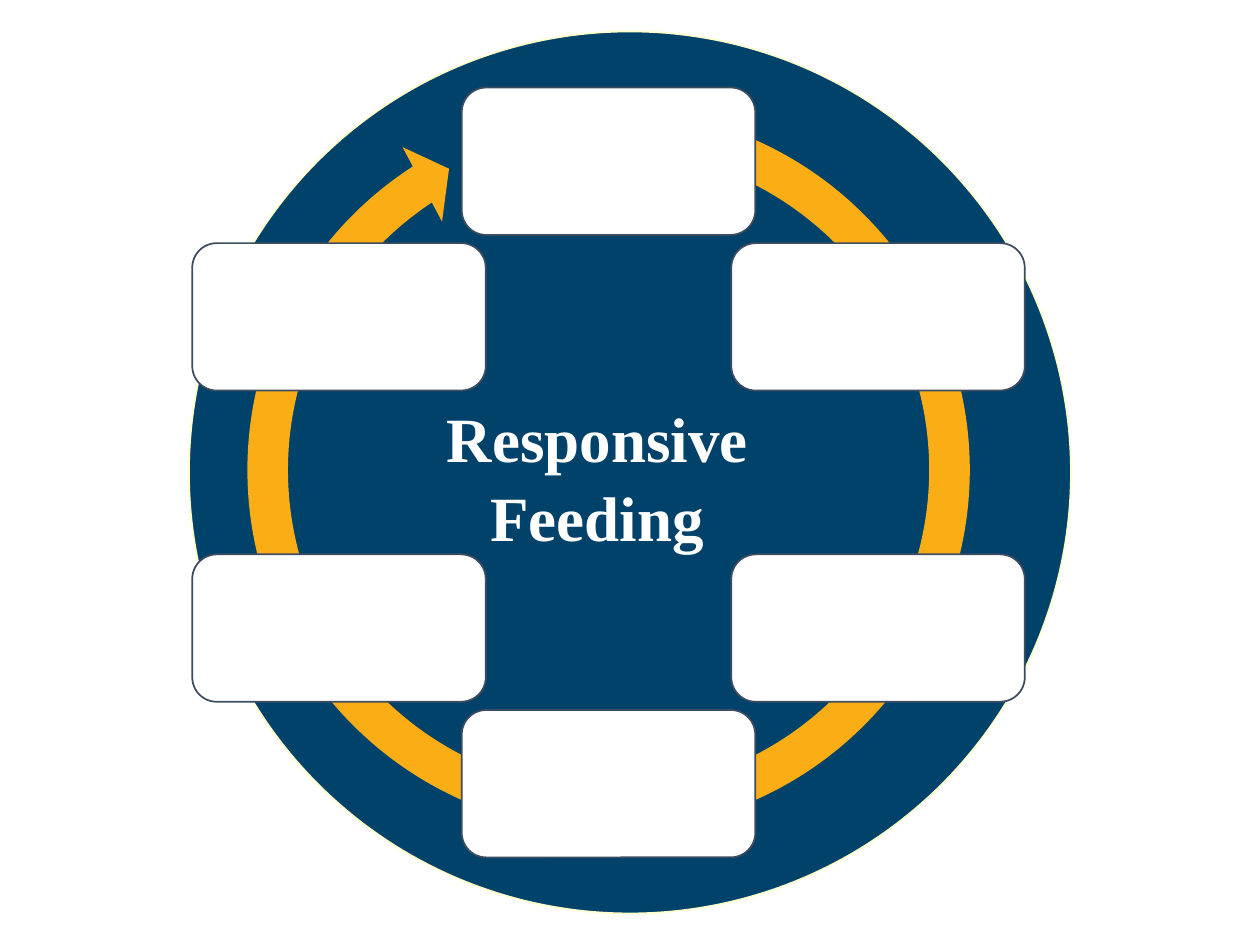
import math

from pptx import Presentation
from pptx import util as u
from pptx.dml.color import RGBColor
from pptx.enum import shapes, text

# Content
TITLE = "Responsive Feeding"
STEP_COUNT = 6

# Layout, in px (100 to the inch)
PX = 9144
SLIDE = (1000, 750)
DISC = (150, 25, 700, 700)
ARROW = (179, 69, 608, 608)
ARROW_ADJUSTMENTS = (0.053, 3.126, 142.131, 171.358, 0.055)
RING_CENTRE, RING_RADIUS = (483, 375), 247
STEP_SIZE = (233, 117)
TITLE_BOX = (307, 309, 334, 131)

COLOURS = {
    "disc": "00426A",
    "disc_edge": "FFFFCC",
    "arrow": "FAAD14",
    "step": "FFFFFF",
    "step_edge": "3E4C60",
    "title": "FFFFFF",
}
TITLE_FONT = {"name": "Times New Roman", "size": u.Pt(36), "bold": True}


def colour(key):
    return RGBColor.from_string(COLOURS[key])


def emu(box):
    return [u.Emu(round(length * PX)) for length in box]


def add_part(slide, preset, box, fill, edge=None):
    part = slide.shapes.add_shape(preset, *emu(box))
    part.shadow.inherit = False
    part.fill.solid()
    part.fill.fore_color.rgb = colour(fill)
    if edge:
        part.line.color.rgb = colour(edge)
        part.line.width = u.Pt(1)
    else:
        part.line.fill.background()
    return part


def main():
    deck = Presentation()
    deck.slide_width, deck.slide_height = emu(SLIDE)
    slide = deck.slides.add_slide(deck.slide_layouts[6])
    preset = shapes.MSO_SHAPE

    # Disc and cycle arrow
    add_part(slide, preset.OVAL, DISC, "disc", "disc_edge")
    arrow = add_part(slide, preset.CIRCULAR_ARROW, ARROW, "arrow")
    for index, value in enumerate(ARROW_ADJUSTMENTS):
        arrow.adjustments[index] = value

    # Empty steps, clockwise from the top
    width, height = STEP_SIZE
    for step in range(STEP_COUNT):
        angle = math.tau * step / STEP_COUNT
        left = RING_CENTRE[0] + RING_RADIUS * math.sin(angle) - width / 2
        top = RING_CENTRE[1] - RING_RADIUS * math.cos(angle) - height / 2
        add_part(slide, preset.ROUNDED_RECTANGLE, (left, top, width, height),
                 "step", "step_edge")

    # Title in the middle
    frame = slide.shapes.add_textbox(*emu(TITLE_BOX)).text_frame
    frame.word_wrap = True
    frame.auto_size = text.MSO_AUTO_SIZE.SHAPE_TO_FIT_TEXT
    title = frame.paragraphs[0]
    title.alignment = text.PP_ALIGN.CENTER
    title.line_spacing = 1.05
    run = title.add_run()
    run.text = TITLE
    for name, value in TITLE_FONT.items():
        setattr(run.font, name, value)
    run.font.color.rgb = colour("title")

    deck.save("out.pptx")


if __name__ == "__main__":
    main()
